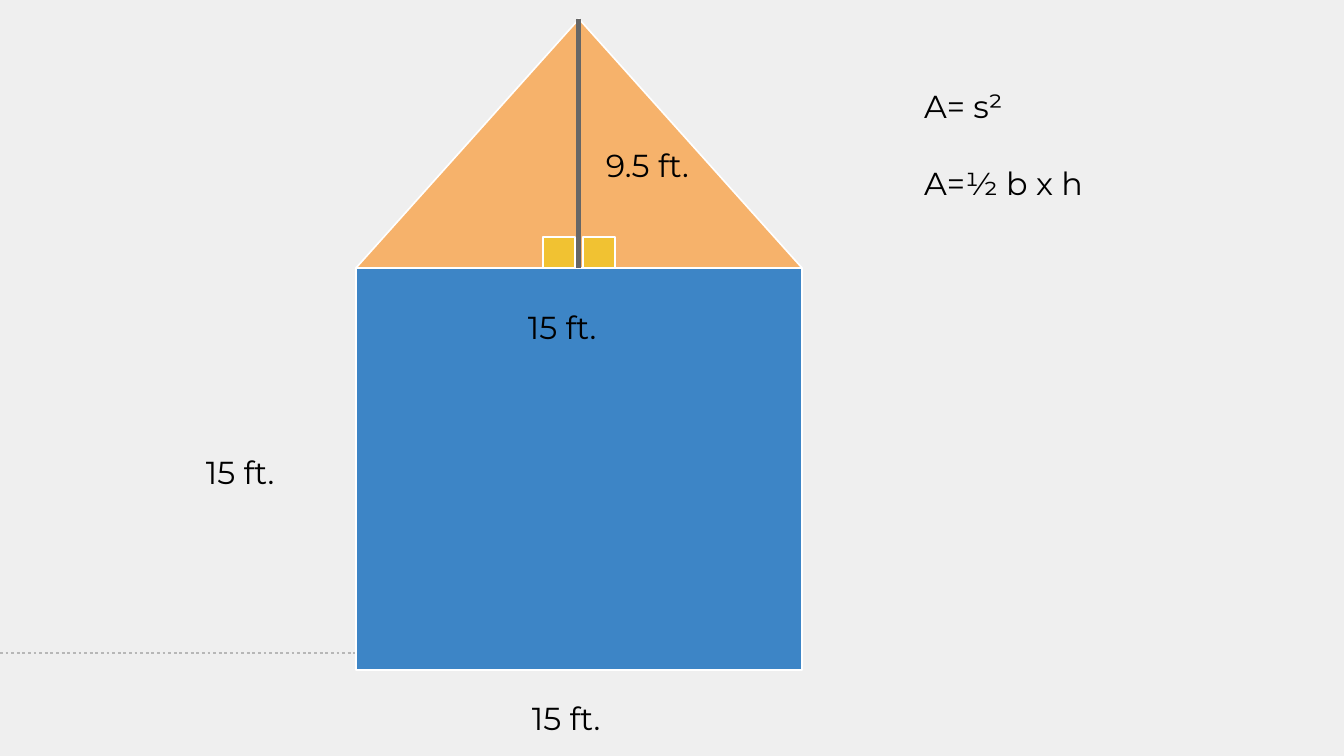
from pptx import Presentation
from pptx.dml.color import RGBColor
from pptx.enum.dml import MSO_LINE as Dash
from pptx.enum.shapes import MSO_CONNECTOR as Link, MSO_SHAPE as Shape
from pptx.oxml.ns import qn
from pptx.util import Pt
from lxml import etree

SCALE = 914400 / 134.4
FONT = "Montserrat"


def px(n):
    return round(n * SCALE)


def color(code):
    return RGBColor.from_string(code)


def block(slide, kind, box, fill, width):
    item = slide.shapes.add_shape(kind, *map(px, box))
    item.shadow.inherit = False
    item.fill.solid()
    item.fill.fore_color.rgb = color(fill)
    item.line.color.rgb = color("FFFFFF")
    item.line.width = Pt(width)
    return item


def rule(slide, ends, tint, width, dash=None):
    item = slide.shapes.add_connector(Link.STRAIGHT, *map(px, ends))
    item.line.color.rgb = color(tint)
    item.line.width = Pt(width)
    if dash:
        item.line.dash_style = dash
    etree.SubElement(item._element.spPr, qn("a:effectLst"))
    return item


def label(slide, box, lines, gap=0):
    frame = slide.shapes.add_textbox(*map(px, box)).text_frame
    frame.word_wrap = True
    frame.margin_left = frame.margin_right = px(13)
    frame.margin_top = frame.margin_bottom = px(13)
    frame.text = "\n".join(lines)
    for i, para in enumerate(frame.paragraphs):
        if i:
            para.space_before = Pt(gap)
        for run in para.runs:
            run.font.name = FONT
            run.font.size = Pt(17)
            run.font.color.rgb = color("000000")


def main():
    deck = Presentation()
    deck.slide_width, deck.slide_height = px(1344), px(756)
    slide = deck.slides.add_slide(deck.slide_layouts[6])
    slide.background.fill.solid()
    slide.background.fill.fore_color.rgb = color("EFEFEF")

    # Dotted ground line, partly behind the house
    rule(slide, (0, 653, 769, 653), "B7B7B7", 1.5, Dash.ROUND_DOT)

    # House: square wall and triangular roof
    left, side, top, eave = 356, 446, 19, 268
    mid = left + side // 2
    wall = block(slide, Shape.RECTANGLE, (left, eave, side, 402),
                 "3D85C6", 0.89)
    roof = block(slide, Shape.ISOSCELES_TRIANGLE,
                 (left, top, side, eave - top), "F6B26B", 0.89)

    # Height of the roof
    height = rule(slide, (mid, top, mid, eave), "666666", 2.68)
    height.begin_connect(roof, 0)
    height.end_connect(wall, 0)

    # Right-angle marks on both sides of the height
    for x in (mid - 36, mid + 4):
        block(slide, Shape.RECTANGLE, (x, eave - 31, 32, 31), "F1C232", 0.75)

    # Measures
    for x, y in ((193, 440), (519, 686), (515, 295)):
        label(slide, (x, y, 122, 50), ["15 ft."])
    label(slide, (593, 133, 142, 78), ["9.5 ft."])

    # Area formulas
    label(slide, (911, 74, 406, 152), ["A= s²", "A=½ b x h"], gap=20.7)

    deck.save("out.pptx")


if __name__ == "__main__":
    main()
